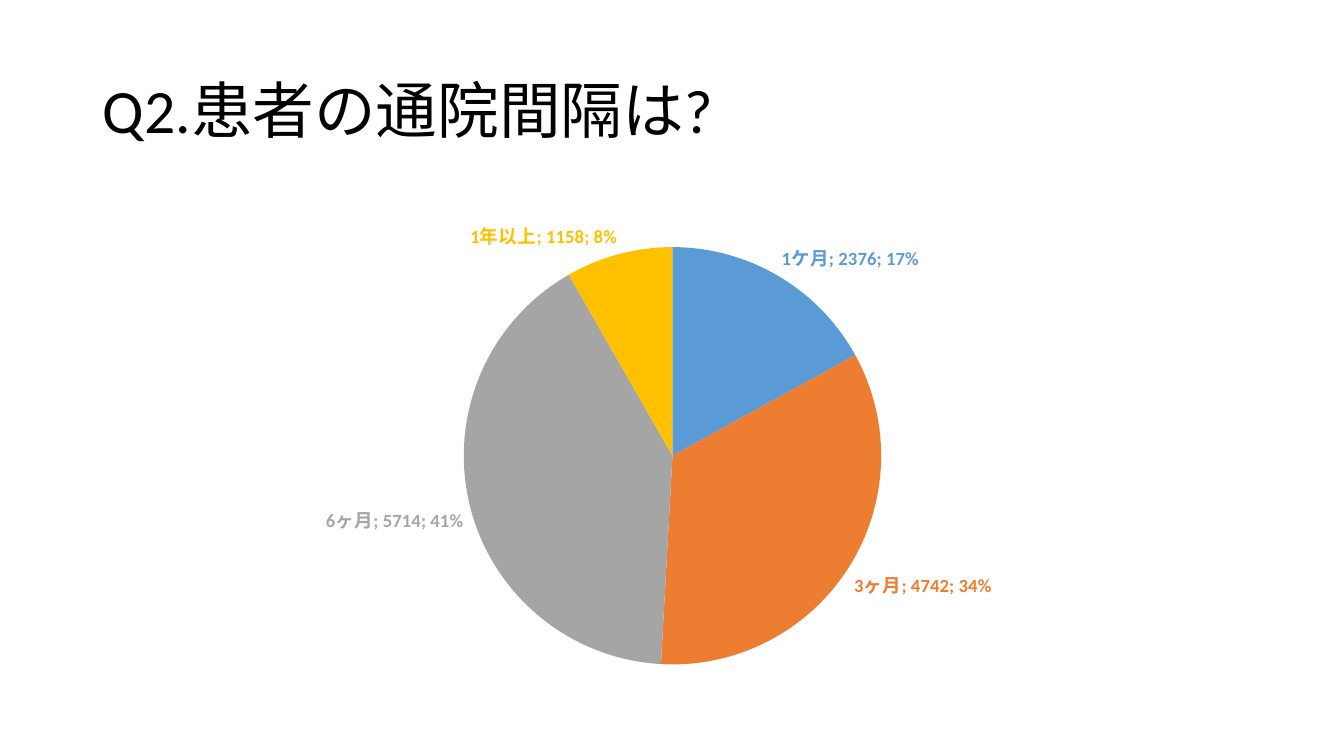
import pptx
import pptx.chart.data
import pptx.dml.color
import pptx.enum.chart
import pptx.enum.text
import pptx.oxml
import pptx.oxml.ns
import pptx.util

Inches = pptx.util.Inches
Pt = pptx.util.Pt
RGBColor = pptx.dml.color.RGBColor

BLACK = RGBColor(0x00, 0x00, 0x00)
BLUE = RGBColor(0x5B, 0x9B, 0xD5)
ORANGE = RGBColor(0xED, 0x7D, 0x31)
GRAY = RGBColor(0xA5, 0xA5, 0xA5)
YELLOW = RGBColor(0xFF, 0xC0, 0x00)

TITLE = "Q2.患者の通院間隔は?"
VISIT_INTERVALS = [
    ("1ケ月", 2376, BLUE),
    ("3ヶ月", 4742, ORANGE),
    ("6ヶ月", 5714, GRAY),
    ("1年以上", 1158, YELLOW),
]
TITLE_BOX = (0.92, 0.4, 11.5, 1.45)
CHART_BOX = (0.92, 2, 11.5, 4.76)
PIE_AREA = {"x": 0.32, "y": 0.09, "w": 0.36, "h": 0.88}  # shares of the chart
FONT = "Calibri"


def set_format(target, values):
    for name, value in values.items():
        setattr(target, name, value)


def place_plot(chart, area):
    """Fix the inner plot area at the given shares of the chart frame."""
    plot_area = chart.element.xpath("c:chart/c:plotArea")[0]
    for old in plot_area.xpath("c:layout"):
        plot_area.remove(old)
    modes = "".join(f'<c:{side}Mode val="edge"/>' for side in "xy")
    sizes = "".join(f'<c:{side} val="{share}"/>' for side, share in area.items())
    plot_area.insert(0, pptx.oxml.parse_xml(
        f'<c:layout {pptx.oxml.ns.nsdecls("c")}><c:manualLayout>'
        f'<c:layoutTarget val="inner"/>{modes}{sizes}'
        '</c:manualLayout></c:layout>'))


def show_label_parts(series):
    """Show category, value and percentage in each point label."""
    for label in series.data_labels._element.xpath("c:dLbl"):
        for part in ("showCatName", "showVal", "showPercent"):
            label.xpath(f"c:{part}")[0].set("val", "1")
        label.append(pptx.oxml.parse_xml(
            f'<c:separator {pptx.oxml.ns.nsdecls("c")}>; </c:separator>'))


def add_title(page):
    title = page.shapes.title
    box = dict(zip(("left", "top", "width", "height"), map(Inches, TITLE_BOX)))
    set_format(title, box)
    title.text_frame.text = TITLE
    title.text_frame.vertical_anchor = pptx.enum.text.MSO_ANCHOR.MIDDLE
    para = title.text_frame.paragraphs[0]
    set_format(para, {"alignment": pptx.enum.text.PP_ALIGN.LEFT, "line_spacing": 0.9})
    span = para.runs[0]
    set_format(span.font, {"name": FONT, "size": Pt(44)})
    span.font.color.rgb = BLACK


def add_pie(page):
    data = pptx.chart.data.CategoryChartData()
    data.categories = [name for name, _, _ in VISIT_INTERVALS]
    data.add_series("Series 1", [count for _, count, _ in VISIT_INTERVALS])
    chart = page.shapes.add_chart(
        pptx.enum.chart.XL_CHART_TYPE.PIE, *map(Inches, CHART_BOX), data).chart
    set_format(chart, {"has_title": False, "has_legend": False})
    set_format(chart.font, {"name": FONT, "size": Pt(10)})
    chart.font.color.rgb = BLACK
    chart.plots[0].vary_by_categories = True

    series = chart.plots[0].series[0]
    outside = pptx.enum.chart.XL_LABEL_POSITION.OUTSIDE_END
    set_format(series.data_labels, {
        "show_category_name": True, "show_value": True,
        "show_percentage": True, "position": outside})
    for index, (_, _, color) in enumerate(VISIT_INTERVALS):
        point = series.points[index]
        point.format.fill.solid()
        point.format.fill.fore_color.rgb = color
        point.format.line.fill.background()
        label = point.data_label
        set_format(label.font, {"name": FONT, "size": Pt(13.3), "bold": True})
        label.font.color.rgb = color
        label.position = outside
    show_label_parts(series)
    place_plot(chart, PIE_AREA)


def main():
    deck = pptx.Presentation()
    set_format(deck, {"slide_width": Inches(13.33), "slide_height": Inches(7.5)})
    page = deck.slides.add_slide(deck.slide_layouts.get_by_name("Title Only"))
    add_title(page)
    add_pie(page)
    deck.save("out.pptx")


if __name__ == "__main__":
    main()
